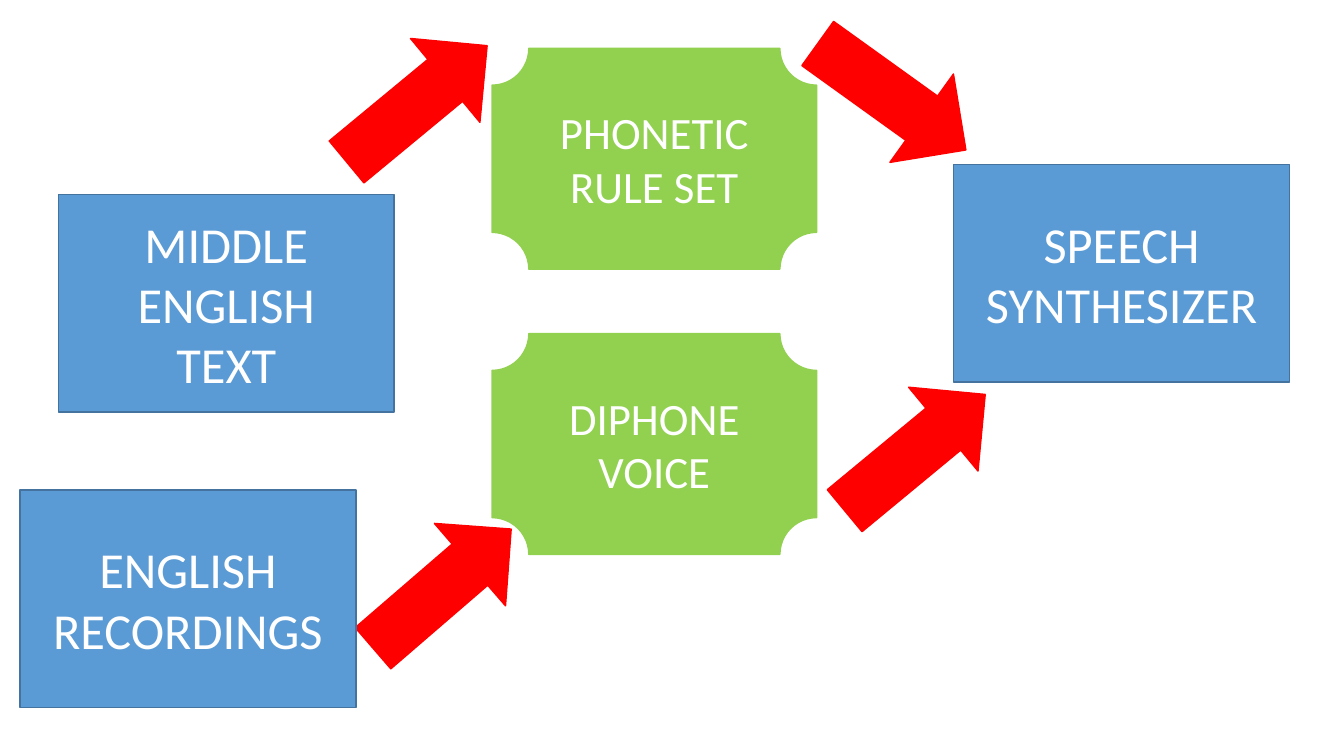
from pptx import Presentation
from pptx.dml.color import RGBColor
from pptx.enum.shapes import MSO_SHAPE
from pptx.enum.text import MSO_ANCHOR, PP_ALIGN
from pptx.util import Inches, Pt

RECTANGLE = MSO_SHAPE.RECTANGLE
PLAQUE = MSO_SHAPE.PLAQUE
RIGHT_ARROW = MSO_SHAPE.RIGHT_ARROW
MIDDLE = MSO_ANCHOR.MIDDLE
CENTER = PP_ALIGN.CENTER

COLORS = {
    "box": "5B9BD5",
    "box_edge": "43739E",
    "plaque": "92D050",
    "arrow": "FF0000",
    "text": "FFFFFF",
}
BLANK_LAYOUT = 6
PLAQUE_LEFT = 4.88


def color(name):
    return RGBColor.from_string(COLORS[name])


def add_figure(slide, preset, left, top, width, height, fill, edge):
    """Add a flat preset shape with a one-point outline."""
    figure = slide.shapes.add_shape(
        preset, Inches(left), Inches(top), Inches(width), Inches(height))
    figure.shadow.inherit = False
    figure.fill.solid()
    figure.fill.fore_color.rgb = color(fill)
    figure.line.color.rgb = color(edge)
    figure.line.width = Pt(1)
    return figure


def write_label(figure, label, size):
    frame = figure.text_frame
    frame.word_wrap = True
    frame.vertical_anchor = MIDDLE
    paragraph = frame.paragraphs[0]
    paragraph.text = label
    paragraph.alignment = CENTER
    paragraph.font.name = "Calibri"
    paragraph.font.size = Pt(size)
    paragraph.font.color.rgb = color("text")


def add_box(slide, label, left, top):
    box = add_figure(slide, RECTANGLE, left, top, 3.33, 2.16, "box", "box_edge")
    write_label(box, label, 36)


def add_plaque(slide, label, top):
    plaque = add_figure(
        slide, PLAQUE, PLAQUE_LEFT, top, 3.22, 2.19, "plaque", "plaque")
    write_label(plaque, label, 32)


def add_arrow(slide, left, top, rotation):
    arrow = add_figure(
        slide, RIGHT_ARROW, left, top, 1.81, 1.08, "arrow", "arrow")
    arrow.rotation = rotation


def main():
    presentation = Presentation()
    presentation.slide_width = Inches(13.33)
    presentation.slide_height = Inches(7.5)
    slide = presentation.slides.add_slide(
        presentation.slide_layouts[BLANK_LAYOUT])

    add_box(slide, "SPEECH SYNTHESIZER", 9.46, 1.63)
    add_arrow(slide, 7.94, 0.42, 35.7)
    add_plaque(slide, "PHONETIC RULE SET", 0.48)
    add_plaque(slide, "DIPHONE\vVOICE", 3.31)
    add_arrow(slide, 8.17, 3.95, 320.4)
    add_box(slide, "MIDDLE\vENGLISH\vTEXT", 0.58, 1.93)
    add_arrow(slide, 3.23, 0.49, 320.4)
    add_arrow(slide, 3.48, 5.3, 319.2)
    add_box(slide, "ENGLISH\vRECORDINGS", 0.2, 4.86)

    presentation.save("out.pptx")


if __name__ == "__main__":
    main()
